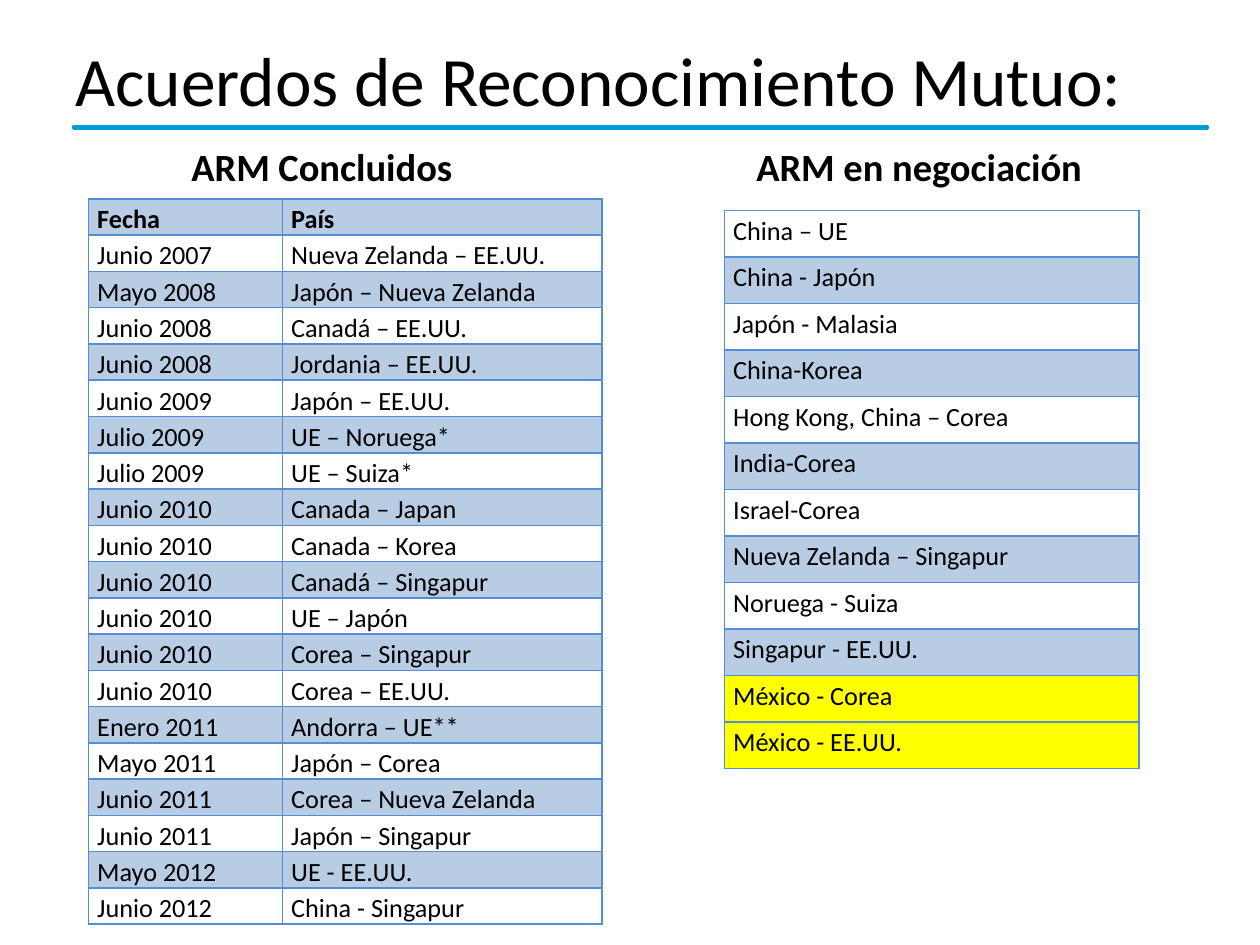
from dataclasses import dataclass

from lxml.etree import SubElement
from pptx import Presentation
from pptx.dml.color import RGBColor as Color
from pptx.enum.shapes import MSO_SHAPE as Shape
from pptx.enum.text import MSO_ANCHOR as Anchor, PP_ALIGN as Align
from pptx.oxml.ns import qn
from pptx.util import Cm, Pt


@dataclass(frozen=True)
class Theme:
    font: str = "Calibri"
    ink: str = "000000"
    rule: str = "009DD9"
    border: str = "548DD4"
    band: str = "B8CCE4"
    plain: str = "FFFFFF"
    mark: str = "FFFF00"
    title_size: float = 39.6
    heading_size: float = 22
    cell_size: float = 15


@dataclass(frozen=True)
class Box:
    left: float
    top: float
    width: float
    height: float

    def lengths(self):
        return Cm(self.left), Cm(self.top), Cm(self.width), Cm(self.height)


THEME = Theme()

CONCLUDED = [
    ("Fecha", "País"),
    ("Junio 2007", "Nueva Zelanda – EE.UU."),
    ("Mayo 2008", "Japón – Nueva Zelanda"),
    ("Junio 2008", "Canadá – EE.UU."),
    ("Junio 2008", "Jordania – EE.UU."),
    ("Junio 2009", "Japón – EE.UU."),
    ("Julio 2009", "UE – Noruega*"),
    ("Julio 2009", "UE – Suiza*"),
    ("Junio 2010", "Canada – Japan"),
    ("Junio 2010", "Canada – Korea"),
    ("Junio 2010", "Canadá – Singapur"),
    ("Junio 2010", "UE – Japón"),
    ("Junio 2010", "Corea – Singapur"),
    ("Junio 2010", "Corea – EE.UU."),
    ("Enero 2011", "Andorra – UE**"),
    ("Mayo 2011", "Japón – Corea"),
    ("Junio 2011", "Corea – Nueva Zelanda"),
    ("Junio 2011", "Japón – Singapur"),
    ("Mayo 2012", "UE - EE.UU."),
    ("Junio 2012", "China - Singapur"),
]

NEGOTIATING = [
    "China – UE",
    "China - Japón",
    "Japón - Malasia",
    "China-Korea",
    "Hong Kong, China – Corea",
    "India-Corea",
    "Israel-Corea",
    "Nueva Zelanda – Singapur",
    "Noruega - Suiza",
    "Singapur - EE.UU.",
    "México - Corea",
    "México - EE.UU.",
]


def write(frame, text, *, size, bold=False, spacing=None):
    para = frame.paragraphs[0]
    para.alignment = Align.LEFT
    if spacing:
        para.line_spacing = spacing
    span = para.add_run()
    span.text = text
    span.font.name = THEME.font
    span.font.size = Pt(size)
    span.font.bold = bold
    span.font.color.rgb = Color.from_string(THEME.ink)
    return para


def add_title(page, box, text):
    title = page.shapes.title
    title.left, title.top, title.width, title.height = box.lengths()
    title.text_frame.vertical_anchor = Anchor.MIDDLE
    title.text_frame.word_wrap = True
    write(title.text_frame, text, size=THEME.title_size)


def add_rule(page, box):
    rule = page.shapes.add_shape(Shape.RECTANGLE, *box.lengths())
    rule.shadow.inherit = False
    rule.fill.solid()
    rule.fill.fore_color.rgb = Color.from_string(THEME.rule)
    rule.line.color.rgb = Color.from_string(THEME.rule)
    rule.line.width = Pt(1.5)


def add_headings(page, box, headings, centers):
    frame = page.shapes.add_textbox(*box.lengths()).text_frame
    frame.word_wrap = True
    text = "".join(f"\t{heading}" for heading in headings)
    para = write(frame, text, size=THEME.heading_size, bold=True)
    stops = SubElement(para._p.get_or_add_pPr(), qn("a:tabLst"))
    for center in centers:
        SubElement(stops, qn("a:tab"), pos=str(Cm(center)), algn="ctr")


def draw_borders(cell):
    properties = cell._tc.get_or_add_tcPr()
    for side in ("a:lnL", "a:lnR", "a:lnT", "a:lnB"):
        line = SubElement(properties, qn(side), w=str(Pt(1)))
        fill = SubElement(line, qn("a:solidFill"))
        SubElement(fill, qn("a:srgbClr"), val=THEME.border)


def add_grid(page, box, rows, widths, fills, *, header=False):
    table = page.shapes.add_table(len(rows), len(widths), *box.lengths()).table
    table.first_row = header
    table.horz_banding = False
    for column, width in zip(table.columns, widths):
        column.width = Cm(width)
    for index, (row, values, color) in enumerate(zip(table.rows, rows, fills)):
        row.height = Cm(box.height / len(rows))
        for cell, value in zip(row.cells, values):
            draw_borders(cell)
            cell.margin_left = cell.margin_right = Cm(0.18)
            cell.margin_top = cell.margin_bottom = 0
            cell.fill.solid()
            cell.fill.fore_color.rgb = Color.from_string(color)
            write(cell.text_frame, value, size=THEME.cell_size,
                  bold=header and index == 0, spacing=1.15)


def add_concluded(page, box):
    fills = [THEME.plain if index % 2 else THEME.band
             for index in range(len(CONCLUDED))]
    date_width = 3.91
    add_grid(page, box, CONCLUDED, [date_width, box.width - date_width],
             fills, header=True)


def add_negotiating(page, box):
    fills = [THEME.mark if name.startswith("México")
             else THEME.band if index % 2 else THEME.plain
             for index, name in enumerate(NEGOTIATING)]
    add_grid(page, box, [(name,) for name in NEGOTIATING], [box.width], fills)


def main():
    deck = Presentation()
    deck.slide_width, deck.slide_height = Cm(25.4), Cm(19.05)
    page = deck.slides.add_slide(deck.slide_layouts[5])
    add_title(page, Box(1.27, 0.64, 22.86, 1.9),
              "Acuerdos de Reconocimiento Mutuo:")
    add_rule(page, Box(1.48, 2.54, 22.86, 0.05))
    add_headings(page, Box(1.6, 2.75, 22.28, 1.55),
                 ["ARM Concluidos", "ARM en negociación"], [4.64, 16.68])
    add_concluded(page, Box(1.78, 4.01, 10.36, 14.6))
    add_negotiating(page, Box(14.6, 4.24, 8.36, 11.26))
    deck.save("out.pptx")


if __name__ == "__main__":
    main()
